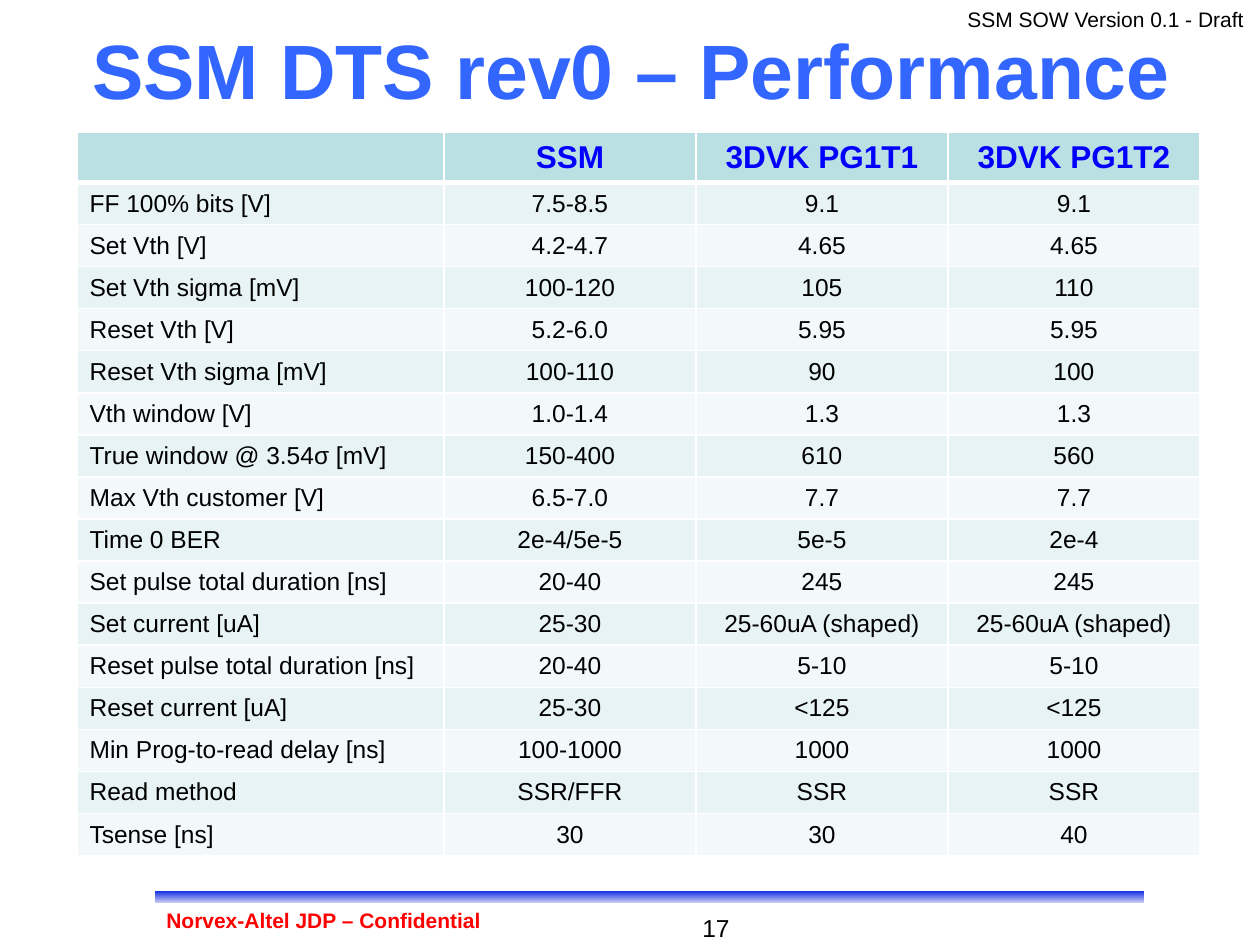
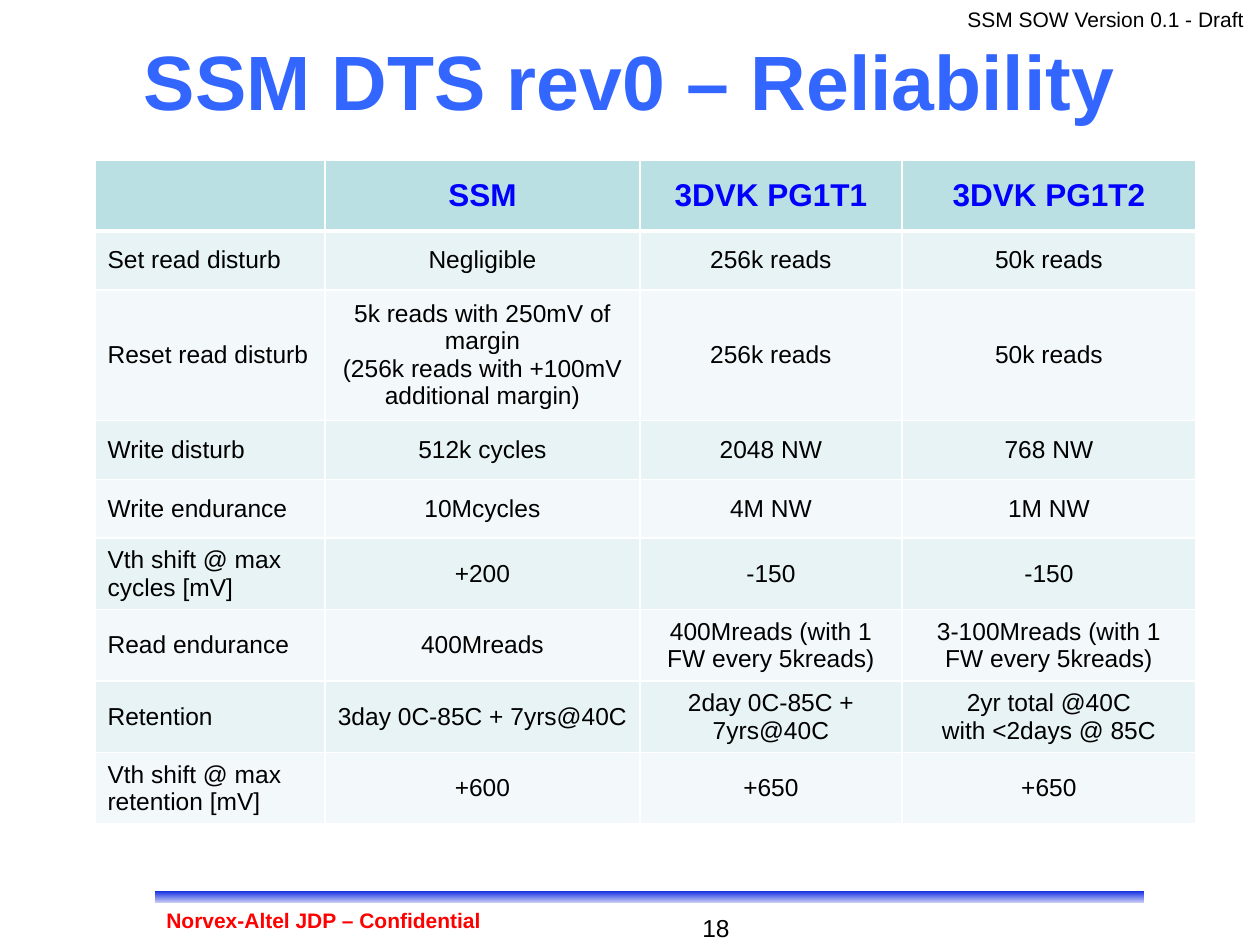
from lxml import etree
from pptx import Presentation
from pptx.dml.color import RGBColor
from pptx.enum.shapes import MSO_SHAPE
from pptx.enum.text import MSO_ANCHOR, PP_ALIGN
from pptx.oxml.ns import qn
from pptx.util import Emu, Pt

RECT = MSO_SHAPE.RECTANGLE
MIDDLE = MSO_ANCHOR.MIDDLE
TOP = MSO_ANCHOR.TOP
LEFT, CENTER, RIGHT = PP_ALIGN.LEFT, PP_ALIGN.CENTER, PP_ALIGN.RIGHT

BLACK = RGBColor(0x00, 0x00, 0x00)
WHITE = RGBColor(0xFF, 0xFF, 0xFF)
RED = RGBColor(0xFF, 0x00, 0x00)
TITLE_BLUE = RGBColor(0x33, 0x66, 0xFF)
HEAD_BLUE = RGBColor(0x00, 0x00, 0xFF)
BAND_DARK = RGBColor(0x00, 0x20, 0xE0)
BAND_LIGHT = RGBColor(0xDA, 0xDA, 0xF6)
HEAD_FILL = RGBColor(0xBB, 0xE0, 0xE3)
ROW_FILLS = (RGBColor(0xE7, 0xF3, 0xF4), RGBColor(0xF3, 0xF9, 0xFA))

FONT = "Arial"
PX_PER_INCH = 126
HEADINGS = ("", "SSM", "3DVK PG1T1", "3DVK PG1T2")

PERFORMANCE = [
    ("FF 100% bits [V]", "7.5-8.5", "9.1", "9.1"),
    ("Set Vth [V]", "4.2-4.7", "4.65", "4.65"),
    ("Set Vth sigma [mV]", "100-120", "105", "110"),
    ("Reset Vth [V]", "5.2-6.0", "5.95", "5.95"),
    ("Reset Vth sigma [mV]", "100-110", "90", "100"),
    ("Vth window [V]", "1.0-1.4", "1.3", "1.3"),
    ("True window @ 3.54σ [mV]", "150-400", "610", "560"),
    ("Max Vth customer [V]", "6.5-7.0", "7.7", "7.7"),
    ("Time 0 BER", "2e-4/5e-5", "5e-5", "2e-4"),
    ("Set pulse total duration [ns]", "20-40", "245", "245"),
    ("Set current [uA]", "25-30", "25-60uA (shaped)", "25-60uA (shaped)"),
    ("Reset pulse total duration [ns]", "20-40", "5-10", "5-10"),
    ("Reset current [uA]", "25-30", "<125", "<125"),
    ("Min Prog-to-read delay [ns]", "100-1000", "1000", "1000"),
    ("Read method", "SSR/FFR", "SSR", "SSR"),
    ("Tsense [ns]", "30", "30", "40"),
]

RELIABILITY = [
    ("Set read disturb", "Negligible", "256k reads", "50k reads"),
    ("Reset read disturb",
     "5k reads with 250mV of margin\n(256k reads with +100mV additional margin)",
     "256k reads", "50k reads"),
    ("Write disturb", "512k cycles", "2048 NW", "768 NW"),
    ("Write endurance", "10Mcycles", "4M NW", "1M NW"),
    ("Vth shift @ max cycles [mV]", "+200", "-150", "-150"),
    ("Read endurance", "400Mreads", "400Mreads (with 1 FW every 5kreads)",
     "3-100Mreads (with 1 FW every 5kreads)"),
    ("Retention", "3day 0C-85C + 7yrs@40C", "2day 0C-85C + 7yrs@40C",
     "2yr total @40C\nwith <2days @ 85C"),
    ("Vth shift @ max retention [mV]", "+600", "+650", "+650"),
]


def px(n):
    """Turn pixels into EMU."""
    return Emu(n * 914400 // PX_PER_INCH)


def spread(total, count):
    """Split a length into near-equal whole parts."""
    edges = [round(total * i / count) for i in range(count + 1)]
    return [b - a for a, b in zip(edges, edges[1:])]


def style_text(tf, size, color, bold=False, align=LEFT):
    """Give every paragraph of a frame one style."""
    for p in tf.paragraphs:
        p.alignment = align
        p.font.name = FONT
        p.font.size = Pt(size)
        p.font.bold = bold
        p.font.color.rgb = color


def add_text(s, box, text, size, color, bold=False, align=LEFT, anchor=TOP, wrap=True):
    """Add a text box at a pixel box."""
    tf = s.shapes.add_textbox(*map(px, box)).text_frame
    tf.word_wrap = wrap
    tf.vertical_anchor = anchor
    tf.text = text
    style_text(tf, size, color, bold, align)


def add_band(s):
    """Add the gradient band above the footer."""
    sp = s.shapes.add_shape(RECT, px(154), px(890), px(991), px(14))
    sp.shadow.inherit = False
    sp.fill.gradient()
    sp.fill.gradient_angle = 270
    for stop, color in zip(sp.fill.gradient_stops, (BAND_DARK, BAND_LIGHT)):
        stop.color.rgb = color
    sp.line.color.rgb = WHITE
    sp.line.width = Pt(1)


def set_borders(cell, bottom=1):
    """Draw white cell borders, with a chosen bottom width in points."""
    tc_pr = cell._tc.get_or_add_tcPr()
    for side, width in (("L", 1), ("R", 1), ("T", 1), ("B", bottom)):
        ln = etree.SubElement(tc_pr, qn(f"a:ln{side}"), w=str(Pt(width)))
        fill = etree.SubElement(ln, qn("a:solidFill"))
        etree.SubElement(fill, qn("a:srgbClr"), val=str(WHITE))


def fill_cell(cell, text, row, col):
    """Write and style one table cell by its place."""
    head = row == 0
    cell.text = text
    cell.vertical_anchor = MIDDLE
    set_borders(cell, 3 if head else 1)
    cell.fill.solid()
    cell.fill.fore_color.rgb = HEAD_FILL if head else ROW_FILLS[(row - 1) % 2]
    align = CENTER if head or col else LEFT
    style_text(cell.text_frame, 18 if head else 14,
               HEAD_BLUE if head else BLACK, head, align)


def add_data_table(s, left, top, widths, heights, rows):
    """Add a comparison table under the shared headings."""
    table = s.shapes.add_table(len(heights), len(widths), px(left), px(top),
                               px(sum(widths)), px(sum(heights))).table
    for column, width in zip(table.columns, widths):
        column.width = px(width)
    for r, (height, values) in enumerate(zip(heights, [HEADINGS, *rows])):
        table.rows[r].height = px(height)
        for c, value in enumerate(values):
            fill_cell(table.cell(r, c), value, r, c)


def add_base_slide(prs, title, title_left, title_top, number):
    """Add a slide with its title, band, header and footer."""
    s = prs.slides.add_slide(prs.slide_layouts[6])
    add_band(s)
    add_text(s, (955, 0, 305, 38), "SSM SOW Version 0.1 - Draft", 12, BLACK, wrap=False)
    add_text(s, (title_left, title_top, 1134, 78), title, 44, TITLE_BLUE, True,
             CENTER, MIDDLE)
    add_text(s, (598, 907, 144, 34), str(number), 14, BLACK, align=RIGHT)
    add_text(s, (154, 901, 402, 33), "Norvex-Altel JDP – Confidential", 12, RED, True)
    return s


def main():
    """Build both slides and save the file."""
    prs = Presentation()
    prs.slide_width, prs.slide_height = px(1260), px(945)

    s = add_base_slide(prs, "SSM DTS rev0 – Performance", 65, 30, 17)
    add_data_table(s, 77, 132, (367, 252, 252, 252),
                   (48, *spread(668, len(PERFORMANCE))), PERFORMANCE)

    s = add_base_slide(prs, "SSM DTS rev0 – Reliability", 63, 41, 18)
    add_data_table(s, 95, 160, (230, 315, 262, 294),
                   (71, 59, 122, 59, 59, 68, 70, 68, 67), RELIABILITY)

    prs.save("out.pptx")


if __name__ == "__main__":
    main()
